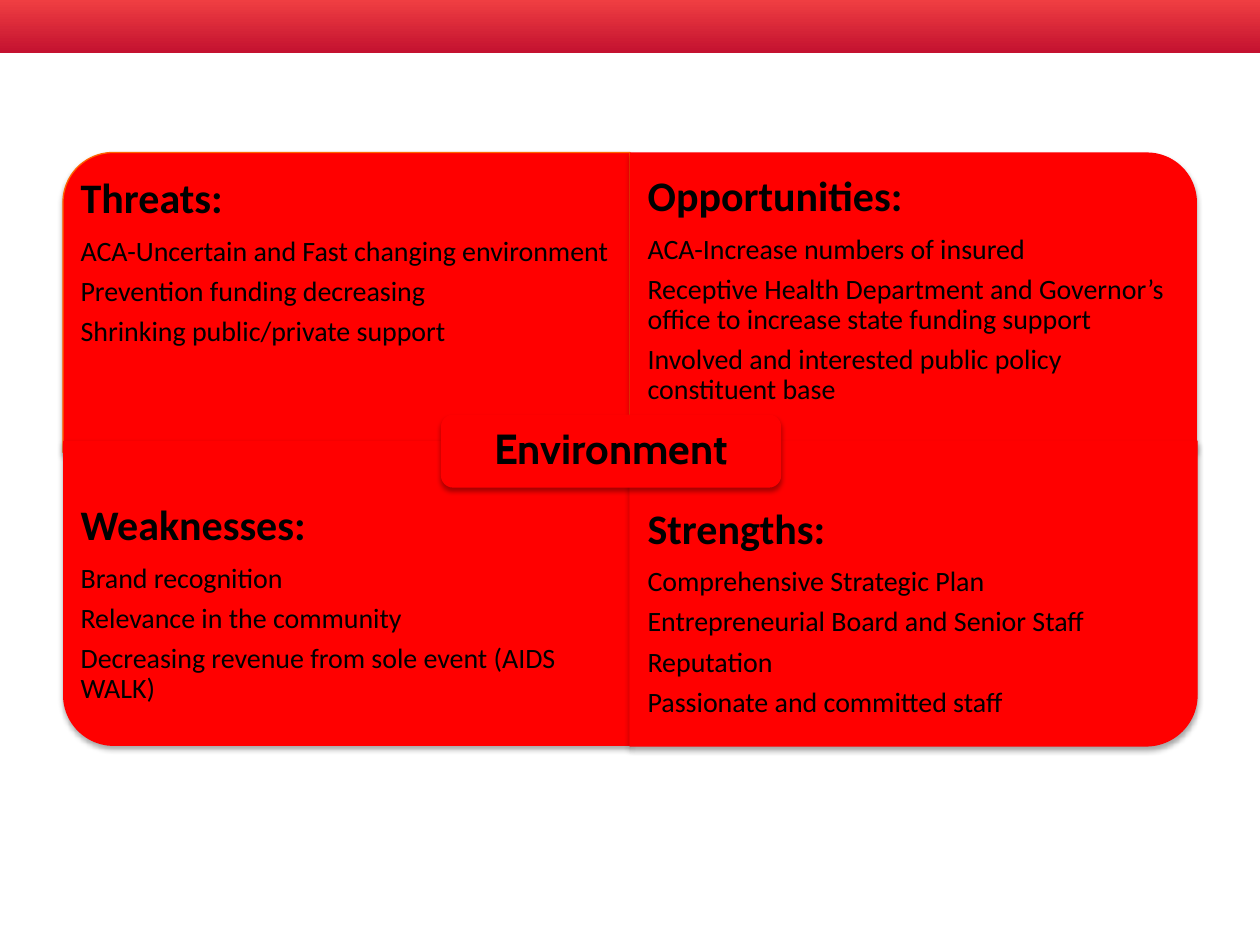
from dataclasses import dataclass

from lxml import etree
from pptx import Presentation
from pptx.dml.color import RGBColor
from pptx.enum import shapes, text
from pptx.oxml import ns
from pptx.util import Inches, Pt


@dataclass(frozen=True)
class Theme:
    panel: str = "FF0000"
    outline: str = "FF6600"
    ink: str = "000000"
    bar_top: str = "EF3E42"
    bar_bottom: str = "C41230"
    body_font: str = "Calibri"
    label_font: str = "Cabin"
    heading_size: int = 24
    body_size: int = 16
    line_spacing: float = 0.9
    space_ratio: float = 0.35


THEME = Theme()
LEFT, MIDDLE, COLUMN_WIDTH = 0.5, 5, 4.5
UPPER_TOP, UPPER_HEIGHT = 1.21, 2.38
LOWER_TOP, LOWER_HEIGHT = 3.5, 2.42

QUADRANTS = [
    (LEFT, UPPER_TOP, UPPER_HEIGHT, 270, THEME.outline, 1.27, "Threats:", [
        "ACA-Uncertain and Fast changing environment",
        "Prevention funding decreasing",
        "Shrinking public/private support"]),
    (MIDDLE, UPPER_TOP, UPPER_HEIGHT, 0, None, 1.25, "Opportunities:", [
        "ACA-Increase numbers of insured",
        "Receptive Health Department and Governor’s office to increase state funding support",
        "Involved and interested public policy constituent base"]),
    (LEFT, LOWER_TOP, LOWER_HEIGHT, 180, None, 3.86, "Weaknesses:", [
        "Brand recognition",
        "Relevance in the community",
        "Decreasing revenue from sole event (AIDS WALK)"]),
    (MIDDLE, LOWER_TOP, LOWER_HEIGHT, 90, THEME.panel, 3.89, "Strengths:", [
        "Comprehensive Strategic Plan",
        "Entrepreneurial Board and Senior Staff",
        "Reputation",
        "Passionate and committed staff"]),
]


def color(value):
    return RGBColor.from_string(value)


def add_shadow(shape):
    shape.shadow.inherit = False
    effects = shape._element.spPr.find(ns.qn("a:effectLst"))
    shadow = etree.SubElement(effects, ns.qn("a:outerShdw"), blurRad=str(Pt(3.1)),
                              dist=str(Pt(1.8)), dir="5400000", rotWithShape="0")
    tint = etree.SubElement(shadow, ns.qn("a:srgbClr"), val=THEME.ink)
    etree.SubElement(tint, ns.qn("a:alpha"), val="35000")


def add_panel(slide, kind, left, top, width, height, rotation=0, outline=None):
    if rotation % 180:
        left, top = left + (width - height) / 2, top + (height - width) / 2
        width, height = height, width
    shape = slide.shapes.add_shape(kind, Inches(left), Inches(top), Inches(width), Inches(height))
    shape.rotation = rotation
    shape.fill.solid()
    shape.fill.fore_color.rgb = color(THEME.panel)
    if outline:
        shape.line.color.rgb = color(outline)
        shape.line.width = Pt(0.75)
    else:
        shape.line.fill.background()
    add_shadow(shape)
    return shape


def set_frame(frame, inset, anchor):
    frame.word_wrap = True
    frame.vertical_anchor = anchor
    frame.margin_left = frame.margin_right = Inches(inset)
    frame.margin_top = frame.margin_bottom = Inches(inset)


def write_paragraph(paragraph, words, size, font, bold, alignment):
    paragraph.alignment = alignment
    paragraph.line_spacing = THEME.line_spacing
    paragraph.space_after = Pt(size * THEME.space_ratio)
    run = paragraph.add_run()
    run.text = words
    run.font.size = Pt(size)
    run.font.name = font
    run.font.bold = bold
    run.font.color.rgb = color(THEME.ink)


def add_quadrant(slide, left, top, height, rotation, outline, text_top, heading, points):
    add_panel(slide, shapes.MSO_SHAPE.ROUND_1_RECTANGLE, left, top, COLUMN_WIDTH, height,
              rotation, outline)
    box = slide.shapes.add_textbox(Inches(left), Inches(text_top), Inches(COLUMN_WIDTH), Inches(2))
    frame = box.text_frame
    set_frame(frame, 0.14, text.MSO_ANCHOR.TOP)
    write_paragraph(frame.paragraphs[0], heading, THEME.heading_size, THEME.body_font, True,
                    text.PP_ALIGN.LEFT)
    for point in points:
        write_paragraph(frame.add_paragraph(), point, THEME.body_size, THEME.body_font, False,
                        text.PP_ALIGN.LEFT)


def add_center_label(slide, words):
    shape = add_panel(slide, shapes.MSO_SHAPE.ROUNDED_RECTANGLE, 3.5, 3.29, 2.7, 0.58)
    set_frame(shape.text_frame, 0.07, text.MSO_ANCHOR.MIDDLE)
    write_paragraph(shape.text_frame.paragraphs[0], words, THEME.heading_size, THEME.label_font,
                    True, text.PP_ALIGN.CENTER)


def add_top_bar(slide):
    bar = slide.shapes.add_shape(shapes.MSO_SHAPE.RECTANGLE, 0, 0, Inches(10), Inches(0.42))
    bar.shadow.inherit = False
    bar.line.fill.background()
    bar.fill.gradient()
    bar.fill.gradient_angle = 270
    for stop, value in zip(bar.fill.gradient_stops, (THEME.bar_top, THEME.bar_bottom)):
        stop.color.rgb = color(value)


def main():
    presentation = Presentation()
    presentation.slide_width, presentation.slide_height = Inches(10), Inches(7.5)
    slide = presentation.slides.add_slide(presentation.slide_layouts[6])
    add_top_bar(slide)
    for quadrant in QUADRANTS:
        add_quadrant(slide, *quadrant)
    add_center_label(slide, "Environment")
    presentation.save("out.pptx")


if __name__ == "__main__":
    main()
